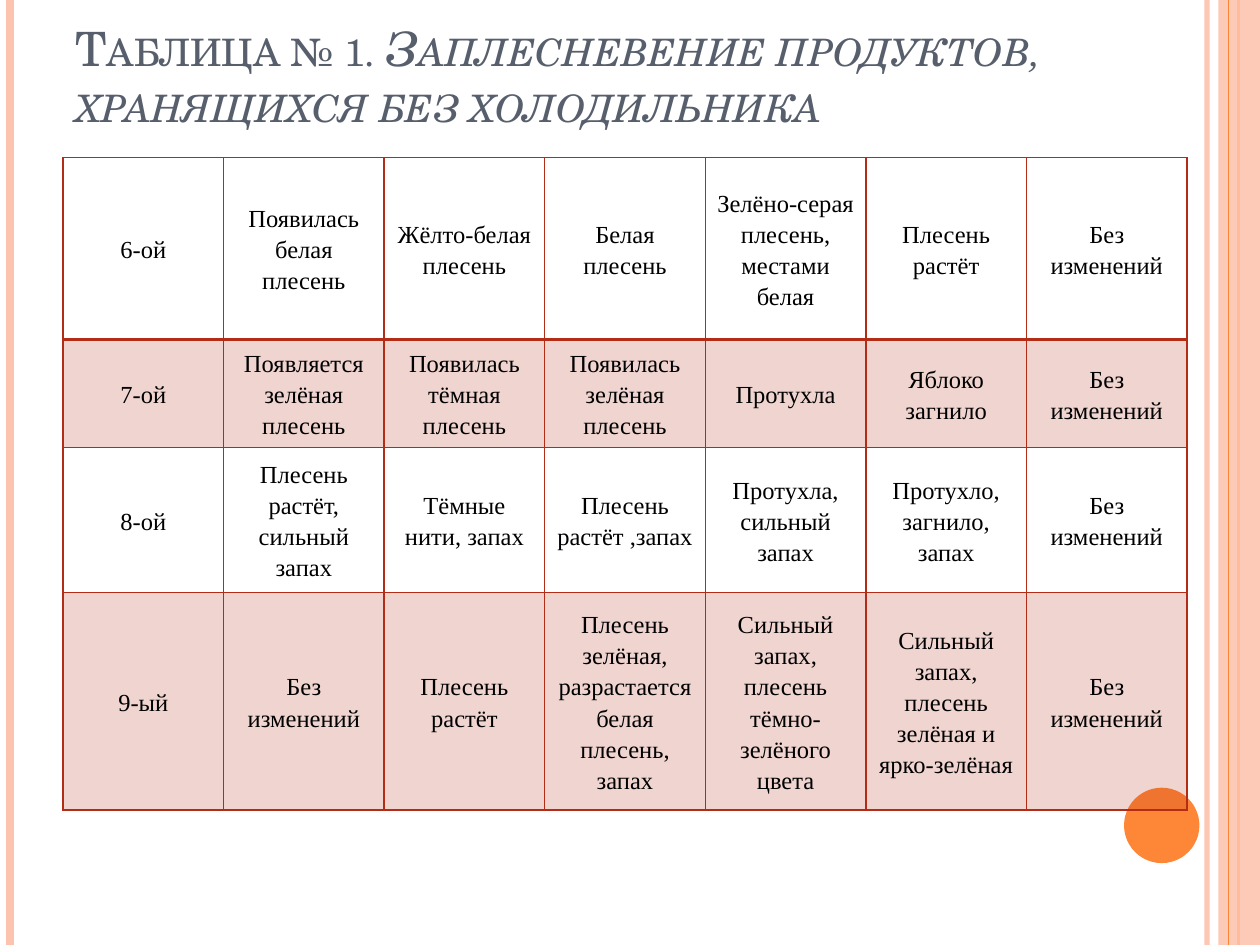
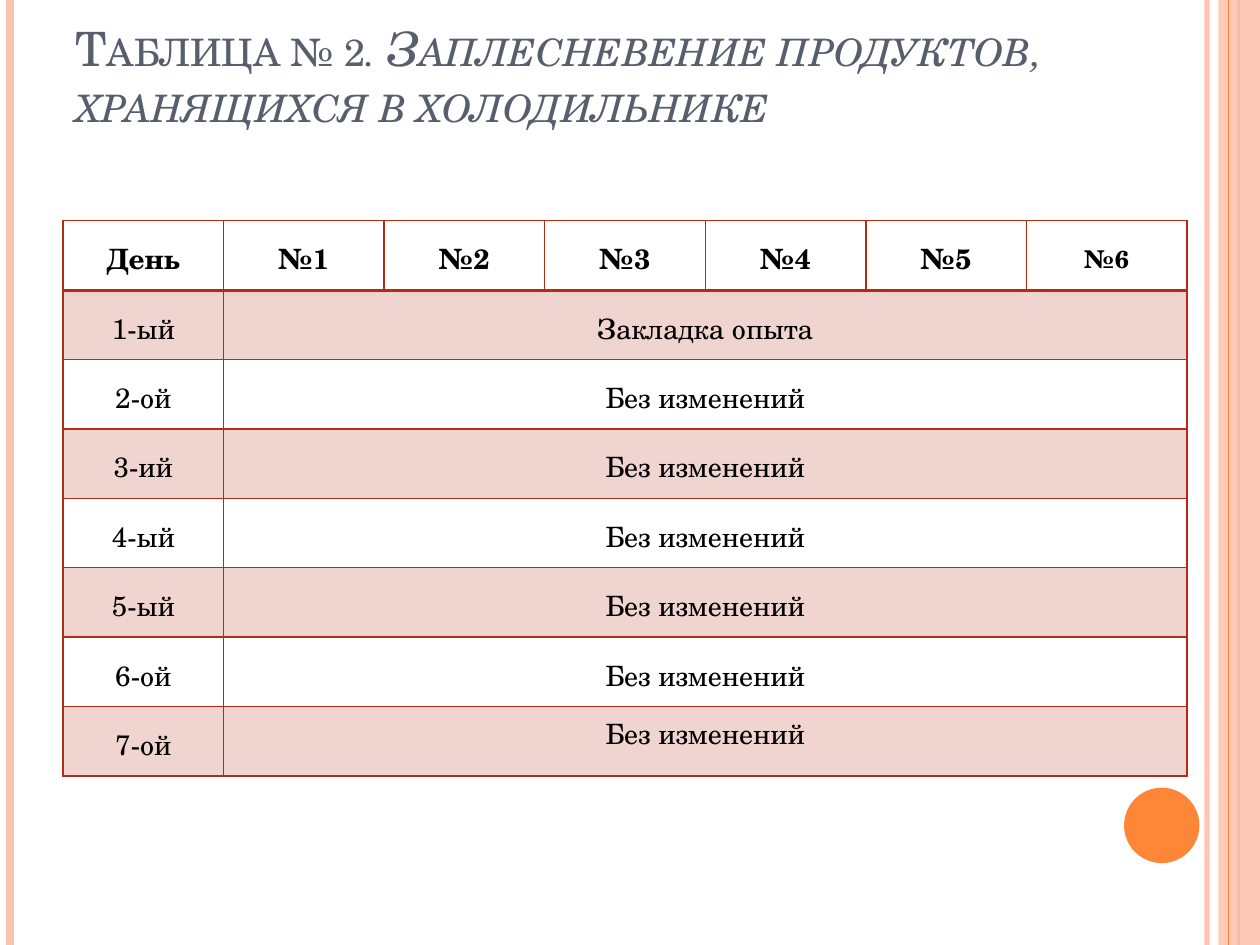
from lxml import etree
from pptx import Presentation
from pptx.dml.color import RGBColor
from pptx.enum.shapes import MSO_CONNECTOR, MSO_SHAPE
from pptx.enum.text import MSO_ANCHOR, PP_ALIGN
from pptx.oxml.ns import qn
from pptx.util import Cm, Pt

STRAIGHT = MSO_CONNECTOR.STRAIGHT
RECTANGLE, OVAL = MSO_SHAPE.RECTANGLE, MSO_SHAPE.OVAL
TOP, MIDDLE, BOTTOM = MSO_ANCHOR.TOP, MSO_ANCHOR.MIDDLE, MSO_ANCHOR.BOTTOM
CENTER = PP_ALIGN.CENTER

COLORS = {"peach": "FEC3AE", "orange": "FE8637", "brick": "B32C16", "slate": "575F6D", "black": "000000"}
SERIF, TIMES = "TeX Gyre Schola", "Times New Roman"
WIDTH, HEIGHT = 25.4, 19.05
LEFT, TABLE_WIDTH = 1.27, 22.66
UNCHANGED = "Без изменений"

WARM_ROWS = [
    ["6-ой", "Появилась белая плесень", "Жёлто-белая плесень", "Белая плесень",
     "Зелёно-серая плесень, местами белая", "Плесень растёт", UNCHANGED],
    ["7-ой", "Появляется зелёная плесень", "Появилась тёмная плесень", "Появилась зелёная плесень",
     "Протухла", "Яблоко загнило", UNCHANGED],
    ["8-ой", "Плесень растёт, сильный запах", "Тёмные нити, запах", "Плесень растёт ,запах",
     "Протухла, сильный запах", "Протухло, загнило, запах", UNCHANGED],
    ["9-ый", UNCHANGED, "Плесень растёт", "Плесень зелёная, разрастается белая плесень, запах",
     "Сильный запах, плесень тёмно-зелёного цвета", "Сильный запах, плесень зелёная и ярко-зелёная",
     UNCHANGED],
]
COLD_DAYS = ["1-ый", "2-ой", "3-ий", "4-ый", "5-ый", "6-ой", "7-ой"]
COLD_ROWS = [["День"] + [f"№{sample}" for sample in range(1, 7)]]
COLD_ROWS += [[day, UNCHANGED if index else "Закладка опыта"] for index, day in enumerate(COLD_DAYS)]


def add_run(paragraph, text, font=SERIF, size=16, color="black", bold=False, italic=False, small_caps=False):
    run = paragraph.add_run()
    run.text = text
    run.font.name = font
    run.font.size = Pt(size)
    run.font.bold = bold
    run.font.italic = italic
    run.font.color.rgb = RGBColor.from_string(COLORS[color])
    if small_caps:
        run._r.get_or_add_rPr().set("cap", "small")
    return run


def set_fill(fill, color, opacity=100):
    fill.solid()
    fill.fore_color.rgb = RGBColor.from_string(COLORS[color])
    if opacity < 100:
        color_element = fill._xPr.find(qn("a:solidFill"))[0]
        etree.SubElement(color_element, qn("a:alpha"), val=str(opacity * 1000))


class Deck:
    """Build slides that share bands, a title style and a table style."""

    def __init__(self):
        self.presentation = Presentation()
        self.presentation.slide_width = Cm(WIDTH)
        self.presentation.slide_height = Cm(HEIGHT)
        self.slide = None

    def add_slide(self):
        self.slide = self.presentation.slides.add_slide(self.presentation.slide_layouts[6])
        self.add_stripe(24.33, "peach", 3, opacity=93)
        self.add_stripe(0.2, "peach", 4.5)
        self.add_stripe(24.97, "orange", 1.5)
        self.add_shape(RECTANGLE, 24.56, 0, WIDTH - 24.56, HEIGHT, "peach", opacity=87)
        self.add_stripe(24.77, "orange", 0.75)
        self.add_shape(OVAL, 22.66, 15.88, 1.52, 1.52, "orange")

    def add_stripe(self, left, color, weight, opacity=100):
        stripe = self.slide.shapes.add_connector(STRAIGHT, Cm(left), 0, Cm(left), Cm(HEIGHT))
        stripe.line.width = Pt(weight)
        set_fill(stripe.line.fill, color, opacity)
        etree.SubElement(stripe._element.spPr, qn("a:effectLst"))

    def add_shape(self, kind, left, top, width, height, color, opacity=100):
        shape = self.slide.shapes.add_shape(kind, Cm(left), Cm(top), Cm(width), Cm(height))
        shape.shadow.inherit = False
        shape.line.fill.background()
        set_fill(shape.fill, color, opacity)

    def add_title(self, label, subject):
        box = self.slide.shapes.add_textbox(Cm(LEFT), Cm(0.76), Cm(20.75), Cm(3.18))
        frame = box.text_frame
        frame.word_wrap = True
        frame.vertical_anchor = BOTTOM
        frame.margin_bottom = Cm(1.27)
        for text, italic in ((label, False), (subject, True)):
            add_run(frame.paragraphs[0], text, size=27, color="slate", italic=italic, small_caps=True)

    def add_table(self, top, heights, rows, font, size):
        column_count = len(rows[0])
        frame = self.slide.shapes.add_table(len(rows), column_count, Cm(LEFT), Cm(top),
                                            Cm(TABLE_WIDTH), Cm(sum(heights)))
        table = frame.table
        table.first_row = table.horz_banding = False
        for column in table.columns:
            column.width = Cm(TABLE_WIDTH / column_count)
        for row_index, (texts, height) in enumerate(zip(rows, heights)):
            table.rows[row_index].height = Cm(height)
            for column_index in range(column_count):
                self.style_cell(table.cell(row_index, column_index), row_index)
            if len(texts) < column_count:
                table.cell(row_index, 1).merge(table.cell(row_index, column_count - 1))
            for column_index, text in enumerate(texts):
                self.write_cell(table.cell(row_index, column_index), text, font=font, size=size)
        return table

    def style_cell(self, cell, row_index):
        properties = cell._tc.get_or_add_tcPr()
        weights = {"L": 1, "R": 1, "T": 2 if row_index == 1 else 1, "B": 2 if row_index == 0 else 1}
        for side, weight in weights.items():
            line = etree.SubElement(properties, qn(f"a:ln{side}"), w=str(Pt(weight)))
            solid = etree.SubElement(line, qn("a:solidFill"))
            etree.SubElement(solid, qn("a:srgbClr"), val=COLORS["brick"])
        if row_index % 2:
            set_fill(cell.fill, "brick", 20)
        else:
            cell.fill.background()

    def write_cell(self, cell, text, **text_format):
        cell.vertical_anchor = MIDDLE
        cell.margin_left = cell.margin_right = Cm(0.18)
        cell.margin_top = cell.margin_bottom = 0
        paragraph = cell.text_frame.paragraphs[0]
        paragraph.alignment = CENTER
        paragraph.line_spacing = 1.15
        add_run(paragraph, text, **text_format)


def main():
    deck = Deck()

    deck.add_slide()
    deck.add_table(3.18, [3.66, 2.18, 2.92, 4.39], WARM_ROWS, TIMES, 14)
    deck.add_title("Таблица № 1. ", "Заплесневение продуктов, хранящихся без холодильника")

    deck.add_slide()
    deck.add_title("Таблица № 2", ". Заплесневение продуктов, хранящихся в холодильнике")
    table = deck.add_table(4.45, [1.4] * len(COLD_ROWS), COLD_ROWS, SERIF, 16)
    for cell in table.rows[0].cells:
        cell.text_frame.paragraphs[0].runs[0].font.bold = True
    table.cell(0, 6).text_frame.paragraphs[0].runs[0].font.size = Pt(14)
    last_result = table.cell(len(COLD_DAYS), 1)
    last_result.vertical_anchor = TOP
    last_result.text_frame.paragraphs[0].space_after = Pt(10)

    deck.presentation.save("out.pptx")


if __name__ == "__main__":
    main()
